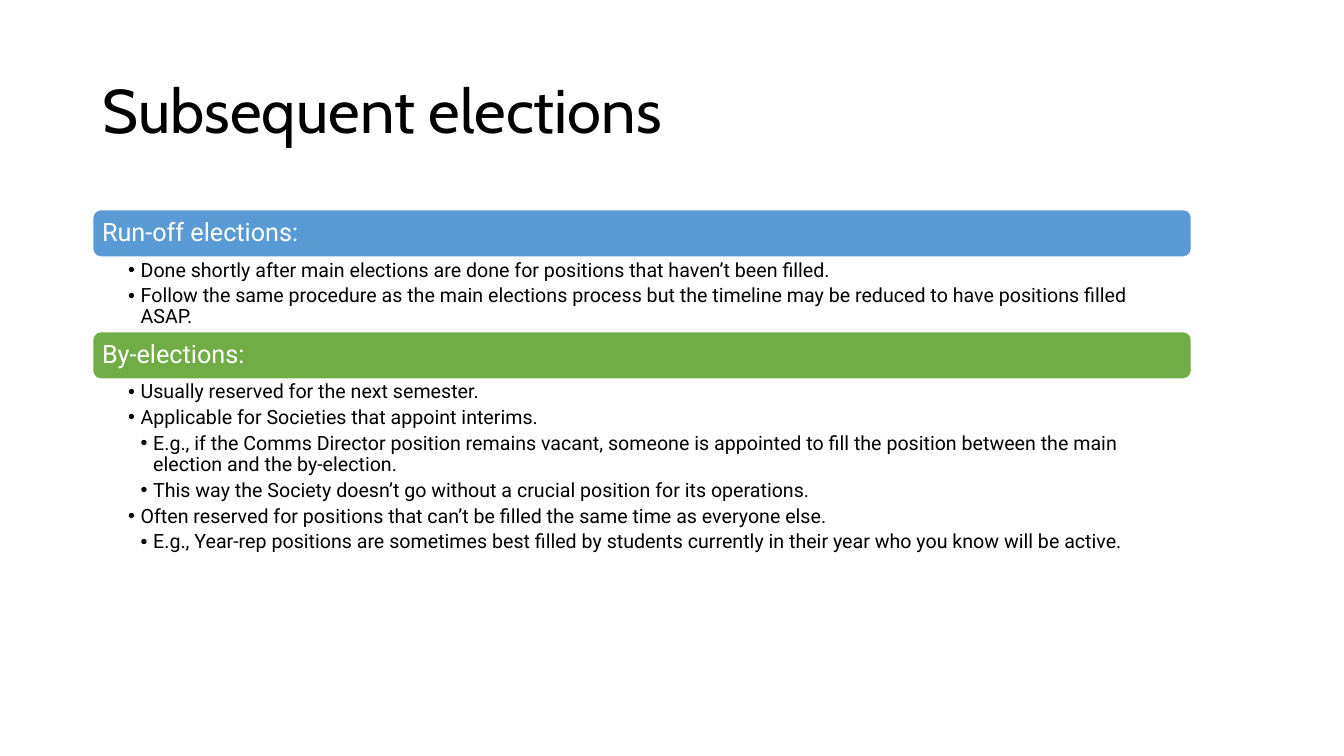
from lxml.etree import SubElement
from pptx import Presentation
from pptx.dml.color import RGBColor
from pptx.enum.shapes import MSO_SHAPE
from pptx.enum.text import MSO_ANCHOR, MSO_AUTO_SIZE, PP_ALIGN
from pptx.oxml.ns import qn
from pptx.util import Inches, Pt

LEFT, WIDTH = Inches(0.92), Inches(10.9)
BAR_HEIGHT = 0.47
HANGING = 0.125

# heading, bar colour, top of bar, height of list, list items as (level, text)
SECTIONS = [
    ("Run-off elections:", "5B9BD5", 2.08, 0.73, [
        (1, "Done shortly after main elections are done for positions that haven’t been filled."),
        (1, "Follow the same procedure as the main elections process but the timeline "
            "may be reduced to have positions filled ASAP."),
    ]),
    ("By-elections:", "70AD47", 3.29, 1.79, [
        (1, "Usually reserved for the next semester."),
        (1, "Applicable for Societies that appoint interims."),
        (2, "E.g., if the Comms Director position remains vacant, someone is appointed "
            "to fill the position between the main election and the by-election."),
        (2, "This way the Society doesn’t go without a crucial position for its operations."),
        (1, "Often reserved for positions that can’t be filled the same time as everyone else."),
        (2, "E.g., Year-rep positions are sometimes best filled by students currently "
            "in their year who you know will be active."),
    ]),
]


def color(hex_string):
    return RGBColor.from_string(hex_string)


def format_paragraph(paragraph, font_name, size, hex_string):
    paragraph.alignment = PP_ALIGN.LEFT
    paragraph.line_spacing = 0.9
    paragraph.space_before = Pt(0)
    paragraph.font.name = font_name
    paragraph.font.size = Pt(size)
    paragraph.font.color.rgb = color(hex_string)


presentation = Presentation()
presentation.slide_width = Inches(13.333)
presentation.slide_height = Inches(7.5)
two_content_layout = presentation.slide_layouts[3]
slide = presentation.slides.add_slide(two_content_layout)

title = slide.shapes.title
title.left, title.top, title.width, title.height = LEFT, Inches(0.4), WIDTH, Inches(1.45)
title.text_frame.text = "Subsequent elections"
title.text_frame.auto_size = MSO_AUTO_SIZE.NONE
title.text_frame.vertical_anchor = MSO_ANCHOR.MIDDLE
format_paragraph(title.text_frame.paragraphs[0], "Cabin", 44, "000000")

for number, (heading, bar_color, top, list_height, items) in enumerate(SECTIONS, start=1):
    bar = slide.shapes.add_shape(
        MSO_SHAPE.ROUNDED_RECTANGLE, LEFT, Inches(top), WIDTH, Inches(BAR_HEIGHT))
    bar.shadow.inherit = False
    bar.fill.solid()
    bar.fill.fore_color.rgb = color(bar_color)
    bar.line.color.rgb = color("FFFFFF")
    bar.line.width = Pt(1)
    frame = bar.text_frame
    frame.margin_left = frame.margin_right = Inches(0.07)
    frame.margin_top = frame.margin_bottom = 0
    frame.vertical_anchor = MSO_ANCHOR.MIDDLE
    frame.text = heading
    format_paragraph(frame.paragraphs[0], "Roboto", 18, "FFFFFF")

    body = slide.placeholders[number]
    body.left, body.top = LEFT, Inches(top + BAR_HEIGHT)
    body.width, body.height = WIDTH, Inches(list_height)
    frame = body.text_frame
    frame.auto_size = MSO_AUTO_SIZE.NONE
    frame.vertical_anchor = MSO_ANCHOR.TOP
    frame.margin_left, frame.margin_right = Inches(0.35), Inches(0.14)
    frame.margin_top = frame.margin_bottom = Inches(0.03)
    frame.text = "\n".join(text for level, text in items)
    for paragraph, (level, text) in zip(frame.paragraphs, items):
        paragraph.level = level
        paragraph.space_after = Pt(3.25)
        properties = paragraph._p.get_or_add_pPr()
        properties.set("marL", str(Inches(HANGING * level)))
        properties.set("indent", str(-Inches(HANGING)))
        SubElement(properties, qn("a:buFont"), typeface="Arial")
        SubElement(properties, qn("a:buChar"), char="•")
        format_paragraph(paragraph, "Roboto", 14, "000000")

presentation.save("out.pptx")
